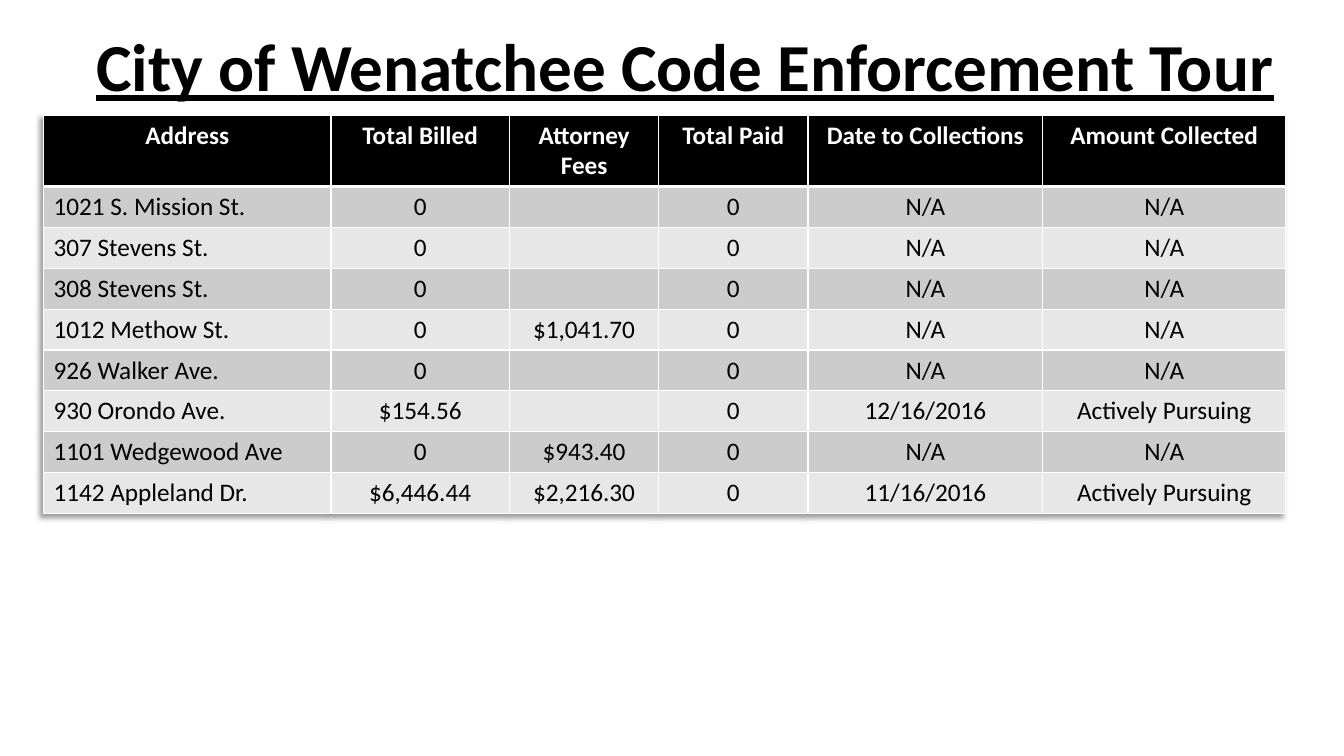
from typing import NamedTuple

from lxml.etree import SubElement
from pptx import Presentation
from pptx.dml.color import RGBColor
from pptx.enum.text import MSO_ANCHOR, PP_ALIGN
from pptx.oxml import parse_xml
from pptx.oxml.ns import nsdecls, qn
from pptx.slide import Slide
from pptx.table import Table, _Cell
from pptx.text.text import Font
from pptx.util import Cm, Pt

FONT_NAME = "Calibri"
BLACK, WHITE = "000000", "FFFFFF"
BAND_FILLS = ("CCCCCC", "E7E7E7")
HEADER_HEIGHT, ROW_HEIGHT = 1.8, 1.03
THIN, THICK = 1, 3


class Column(NamedTuple):
    heading: str
    width: float
    alignment: PP_ALIGN = PP_ALIGN.CENTER


class Property(NamedTuple):
    address: str
    billed: str = "0"
    attorney_fees: str = ""
    paid: str = "0"
    collections_date: str = "N/A"
    collected: str = "N/A"


COLUMNS = (
    Column("Address", 7.24, PP_ALIGN.LEFT),
    Column("Total Billed", 4.5),
    Column("Attorney Fees", 3.76),
    Column("Total Paid", 3.76),
    Column("Date to Collections", 5.92),
    Column("Amount Collected", 6.12),
)
PROPERTIES = (
    Property("1021 S. Mission St."),
    Property("307 Stevens St."),
    Property("308 Stevens St."),
    Property("1012 Methow St.", attorney_fees="$1,041.70"),
    Property("926 Walker Ave."),
    Property("930 Orondo Ave.", "$154.56", collections_date="12/16/2016",
             collected="Actively Pursuing"),
    Property("1101 Wedgewood Ave", attorney_fees="$943.40"),
    Property("1142 Appleland Dr.", "$6,446.44", "$2,216.30",
             collections_date="11/16/2016", collected="Actively Pursuing"),
)


def color(value: str) -> RGBColor:
    return RGBColor.from_string(value)


def style_font(font: Font, size: float, font_color: str, bold: bool) -> None:
    font.name = FONT_NAME
    font.size = Pt(size)
    font.bold = bold
    font.color.rgb = color(font_color)


def add_title(slide: Slide) -> None:
    text_frame = slide.shapes.add_textbox(
        Cm(2.18), Cm(0.33), Cm(32.05), Cm(2.84)).text_frame
    text_frame.word_wrap = True
    text_frame.vertical_anchor = MSO_ANCHOR.MIDDLE
    text_frame.text = "City of Wenatchee Code Enforcement Tour"
    paragraph = text_frame.paragraphs[0]
    paragraph.line_spacing = 0.9
    font = paragraph.runs[0].font
    style_font(font, 48, BLACK, True)
    font.underline = True


def set_borders(cell: _Cell, top: int, bottom: int) -> None:
    """Draw white borders; call before the fill, which must follow them."""
    properties = cell._tc.get_or_add_tcPr()
    for side, width in (("L", THIN), ("R", THIN), ("T", top), ("B", bottom)):
        line = SubElement(properties, qn(f"a:ln{side}"), w=str(Pt(width)))
        fill = SubElement(line, qn("a:solidFill"))
        SubElement(fill, qn("a:srgbClr"), val=WHITE)


def fill_cell(cell: _Cell, text: str, alignment: PP_ALIGN, fill: str,
              font_color: str, bold: bool) -> None:
    cell.fill.solid()
    cell.fill.fore_color.rgb = color(fill)
    cell.text_frame.text = text
    paragraph = cell.text_frame.paragraphs[0]
    paragraph.alignment = alignment
    style_font(paragraph.font, 18, font_color, bold)
    for run in paragraph.runs:
        style_font(run.font, 18, font_color, bold)


def add_shadow(table: Table) -> None:
    table._tbl.tblPr.insert(0, parse_xml(
        f'<a:effectLst {nsdecls("a")}>'
        '<a:outerShdw blurRad="50800" dist="38100" dir="8100000" algn="tr" rotWithShape="0">'
        f'<a:srgbClr val="{BLACK}"><a:alpha val="40000"/></a:srgbClr>'
        '</a:outerShdw></a:effectLst>'))


def add_billing_table(slide: Slide) -> None:
    width = sum(column.width for column in COLUMNS)
    height = HEADER_HEIGHT + ROW_HEIGHT * len(PROPERTIES)
    table = slide.shapes.add_table(
        len(PROPERTIES) + 1, len(COLUMNS),
        Cm(1.1), Cm(2.9), Cm(width), Cm(height)).table
    add_shadow(table)
    table.rows[0].height = Cm(HEADER_HEIGHT)
    for index, column in enumerate(COLUMNS):
        table.columns[index].width = Cm(column.width)
        heading_cell = table.cell(0, index)
        set_borders(heading_cell, THIN, THICK)
        fill_cell(heading_cell, column.heading, PP_ALIGN.CENTER, BLACK, WHITE, True)
    for row, entry in enumerate(PROPERTIES, start=1):
        table.rows[row].height = Cm(ROW_HEIGHT)
        band = BAND_FILLS[(row - 1) % 2]
        for index, (column, text) in enumerate(zip(COLUMNS, entry)):
            cell = table.cell(row, index)
            set_borders(cell, THICK if row == 1 else THIN, THIN)
            fill_cell(cell, text, column.alignment, band, BLACK, False)


def main() -> None:
    presentation = Presentation()
    presentation.slide_width = Cm(33.87)
    presentation.slide_height = Cm(19.05)
    slide = presentation.slides.add_slide(presentation.slide_layouts[6])
    add_title(slide)
    add_billing_table(slide)
    presentation.save("out.pptx")


if __name__ == "__main__":
    main()
